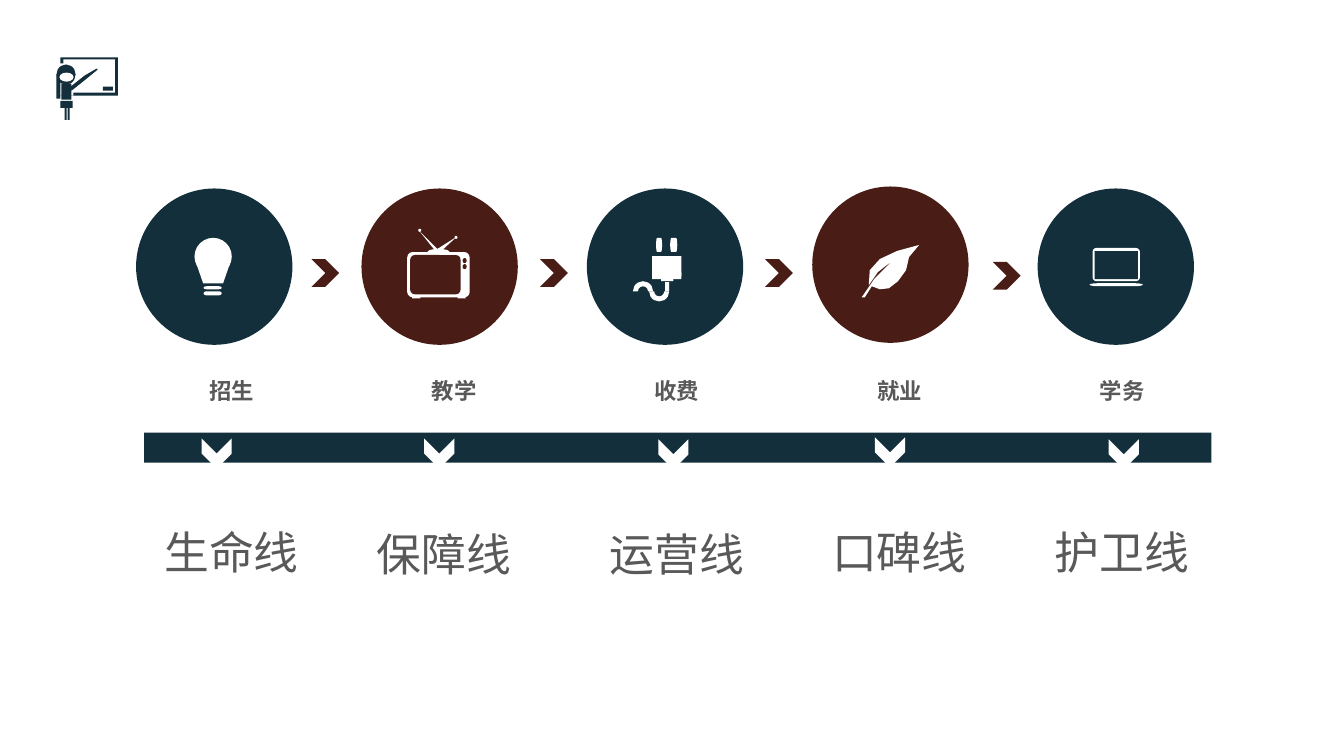
"""Build the slide that shows five school tasks and the lifeline each one stands for."""
import pptx
import pptx.dml.color
import pptx.enum.shapes
import pptx.enum.text
import pptx.util

Cm = pptx.util.Cm
SHAPE = pptx.enum.shapes.MSO_SHAPE
BLOCK, ROUND, PILL = SHAPE.RECTANGLE, SHAPE.ROUNDED_RECTANGLE, SHAPE.FLOWCHART_TERMINATOR
OVAL, ARC, FUNNEL = SHAPE.OVAL, SHAPE.BLOCK_ARC, SHAPE.FLOWCHART_MANUAL_OPERATION
COLORS = {"navy": "122F3B", "maroon": "491D16", "white": "FFFFFF", "gray": "595959"}
ICON_UNIT = 0.0254
STAGE_PITCH, TEXT_PITCH = 5.68, 5.61

LABEL = {"size": pptx.util.Pt(16), "bold": True, "name": "Calibri"}
LIFELINE = {"size": pptx.util.Pt(32), "bold": False, "name": "Calibri"}
CENTERED = {"alignment": pptx.enum.text.PP_ALIGN.CENTER}
SPACED = {"alignment": pptx.enum.text.PP_ALIGN.LEFT, "line_spacing": 1.5}

TEACHER = [
    (BLOCK, "navy", (60, 57, 57, 38)),
    (BLOCK, "white", (63, 59, 51, 33)),
    (BLOCK, "white", (56, 63, 17, 32)),
    (BLOCK, "navy", (102, 86, 10, 4)),
    (OVAL, "navy", (56, 64, 19, 20)),
    (BLOCK, "navy", (56, 74, 4, 24)),
    (OVAL, "white", (59, 72, 14, 9)),
    (BLOCK, "navy", (61, 83, 10, 16)),
    (BLOCK, "navy", (60, 100, 12, 7)),
    (BLOCK, "navy", (64, 107, 2, 12)),
    (BLOCK, "navy", (67, 107, 2, 12)),
    (None, "navy", [(70, 86), (84, 75), (96, 68), (97, 69), (86, 78), (71, 90)]),
]
BULB = [
    (OVAL, "white", (193, 236, 37, 37)),
    (FUNNEL, "white", (195, 262, 33, 19)),
    (PILL, "white", (202, 284, 18, 3)),
    (PILL, "white", (202, 289, 18, 4)),
]
TELEVISION = [
    (None, "white", [(416, 229), (434, 247), (453, 235), (438, 249), (432, 249)]),
    (OVAL, "white", (415, 227, 3, 3)),
    (OVAL, "white", (451, 234, 3, 3)),
    (OVAL, "white", (424, 247, 22, 6)),
    (ROUND, "white", (404, 250, 62, 45)),
    (BLOCK, "white", (409, 294, 8, 2)),
    (BLOCK, "white", (454, 294, 8, 2)),
    (ROUND, "maroon", (407, 253, 50, 39)),
    (OVAL, "maroon", (459, 256, 4, 5)),
    (OVAL, "maroon", (459, 262, 4, 5)),
]
PLUG = [
    (PILL, "white", (651, 236, 6, 14), 0.5),
    (PILL, "white", (665, 236, 7, 14)),
    (BLOCK, "white", (647, 254, 29, 20)),
    (ROUND, "white", (647, 270, 29, 7)),
    (ROUND, "white", (656, 276, 12, 3)),
    (ARC, "white", (628, 279, 20, 20)),
    (ARC, "white", (644, 279, 20, 20), 180),
    (BLOCK, "white", (660, 280, 4, 9)),
]
PLUG[0] = PLUG[0][:3]
LEAF = [
    (None, "white", [
        (855, 295), (858, 295), (865, 284), (873, 287), (882, 286), (891, 279),
        (899, 268), (902, 255), (912, 243), (890, 249), (873, 257), (863, 268),
        (862, 283), (871, 270), (885, 259), (868, 276)]),
]
LAPTOP = [
    (PILL, "white", (1081, 281, 53, 3)),
    (ROUND, "white", (1084, 246, 47, 33)),
    (BLOCK, "navy", (1086, 249, 43, 28)),
]

STAGES = [
    ("招生", "生命线", BULB, "navy"),
    ("教学", "保障线", TELEVISION, "maroon"),
    ("收费", "运营线", PLUG, "navy"),
    ("就业", "口碑线", LEAF, "maroon"),
    ("学务", "护卫线", LAPTOP, "navy"),
]
CIRCLE_TOPS = [4.75, 4.75, 4.75, 4.7, 4.75]
ARROWS = [(7.85, 6.53), (13.61, 6.53), (19.28, 6.53), (25.02, 6.6)]
NOTCHES = [(5.08, 11.05), (10.69, 11.05), (16.59, 11.07), (22.05, 11.02), (27.94, 11.07)]
LIFELINE_TOPS = [12.42, 12.47, 12.47, 12.42, 12.42]
LIFELINE_INSETS = [1.02, 0.76, 1.02, 1.02, 1.02]


def paint(shape, color):
    """Give a shape a flat fill without line or shadow."""
    shape.shadow.inherit = False
    shape.fill.solid()
    shape.fill.fore_color.rgb = pptx.dml.color.RGBColor.from_string(COLORS[color])
    shape.line.fill.background()


def add_shape(shapes, kind, place, color, rotation=0):
    """Add a painted preset shape."""
    shape = shapes.add_shape(kind, *(Cm(length) for length in place))
    shape.rotation = rotation
    if kind == ROUND:
        shape.adjustments[0] = 0.12
    paint(shape, color)


def add_outline(shapes, points, color):
    """Add a painted polygon."""
    start, *rest = [(Cm(x * ICON_UNIT), Cm(y * ICON_UNIT)) for x, y in points]
    builder = shapes.build_freeform(*start)
    builder.add_line_segments(rest, close=True)
    paint(builder.convert_to_shape(), color)


def add_icon(page, parts):
    """Draw an icon, grouping its parts when there are several."""
    shapes = page.shapes.add_group_shape().shapes if len(parts) > 1 else page.shapes
    for kind, color, geometry, *rotation in parts:
        if kind is None:
            add_outline(shapes, geometry, color)
        else:
            place = [length * ICON_UNIT for length in geometry]
            add_shape(shapes, kind, place, color, *rotation)


def add_text(page, text, place, font, layout, inset=0.25):
    """Add a gray one-paragraph text box."""
    box = page.shapes.add_textbox(*(Cm(length) for length in place))
    box.text_frame.word_wrap = True
    box.text_frame.margin_left = Cm(inset)
    para = box.text_frame.paragraphs[0]
    span = para.add_run()
    span.text = text
    span.font.color.rgb = pptx.dml.color.RGBColor.from_string(COLORS["gray"])
    for target, values in ((para, layout), (span.font, font)):
        for name, value in values.items():
            setattr(target, name, value)


def main():
    """Build and save the slide."""
    deck = pptx.Presentation()
    deck.slide_width, deck.slide_height = Cm(33.87), Cm(19.05)
    page = deck.slides.add_slide(deck.slide_layouts[6])
    add_icon(page, TEACHER)
    for index, (label, lifeline, icon, color) in enumerate(STAGES):
        circle = (3.43 + STAGE_PITCH * index, CIRCLE_TOPS[index], 3.94, 3.94)
        add_shape(page.shapes, OVAL, circle, color)
        add_icon(page, icon)
        text_shift = TEXT_PITCH * index
        add_text(page, label, (3.58 + text_shift, 9.37, 4.52, 0.94), LABEL, CENTERED)
        add_text(page, lifeline, (3.12 + text_shift, LIFELINE_TOPS[index], 5.44, 3.23),
                 LIFELINE, SPACED, LIFELINE_INSETS[index])
    for corner in ARROWS:
        add_shape(page.shapes, SHAPE.CHEVRON, (*corner, 0.7, 0.7), "maroon")
    band = page.shapes.add_group_shape().shapes
    add_shape(band, BLOCK, (3.63, 10.9, 26.9, 0.76), "navy")
    for corner in NOTCHES:
        add_shape(band, SHAPE.CHEVRON, (*corner, 0.76, 0.76), "white", 90)
    deck.save("out.pptx")


if __name__ == "__main__":
    main()
